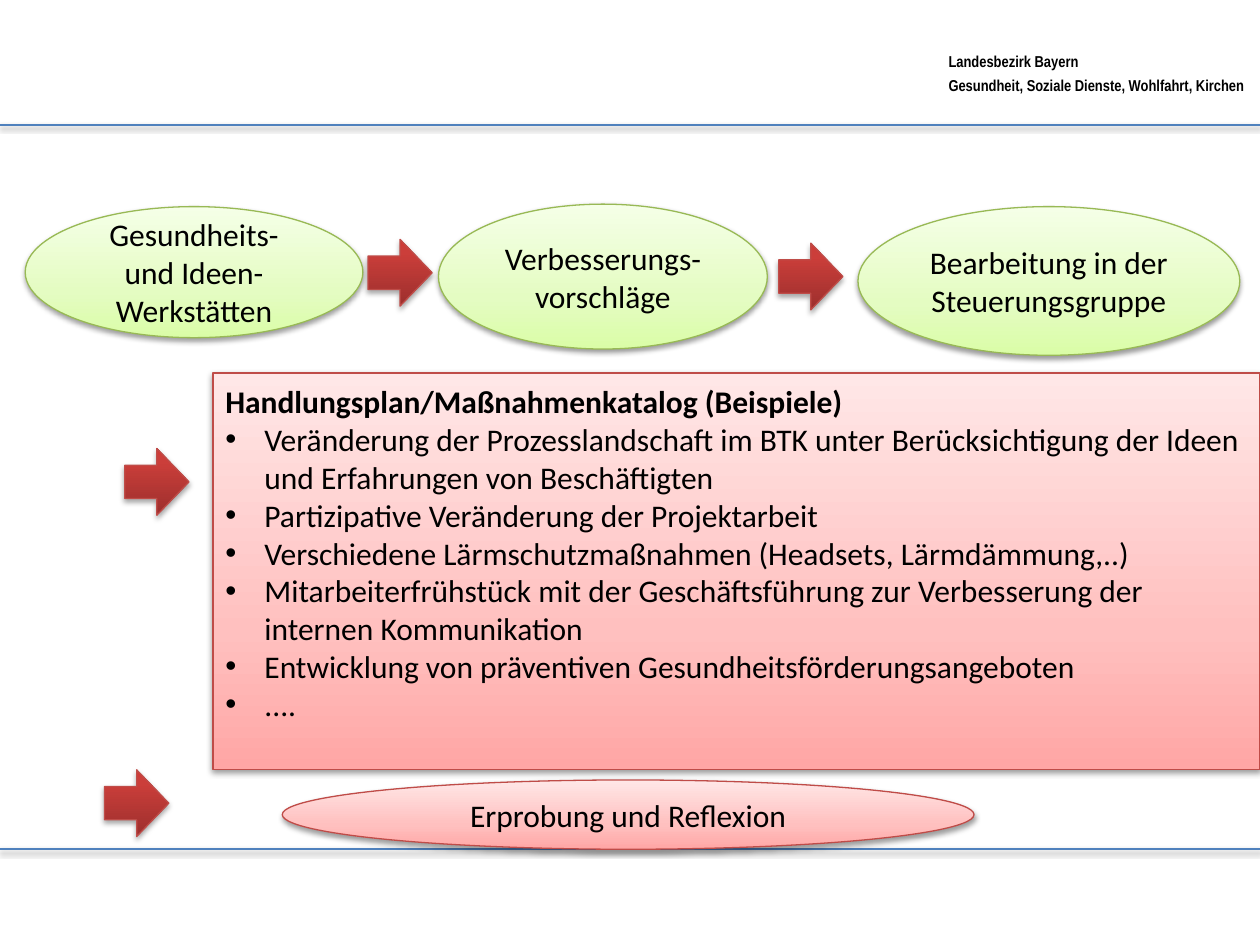
from dataclasses import dataclass

from lxml import etree
from pptx import Presentation
from pptx.dml.color import RGBColor
from pptx.enum.shapes import MSO_CONNECTOR as Connector, MSO_SHAPE as Preset
from pptx.enum.text import MSO_ANCHOR as Anchor, PP_ALIGN as Align
from pptx.oxml.ns import qn
from pptx.util import Inches, Pt


@dataclass(frozen=True)
class Style:
    stops: tuple[tuple[int, str], ...]
    line: str
    shadow_alpha: int = 38
    shadow_distance: float = 1.6


@dataclass(frozen=True)
class Box:
    preset: Preset
    left: float
    top: float
    width: float
    height: float
    style: Style
    text: str = ""


GREEN = Style(((0, "DAFDA7"), (35, "E4FCC2"), (100, "F5FFE7")), "98B955")
PINK = Style(((0, "FFA6A5"), (35, "FFC0BF"), (100, "FFE7E7")), "BF4C48")
RED = Style(((0, "9C2F2D"), (80, "CB3E3A"), (100, "CE3B37")), "BF4C48", 35, 1.8)

HEADER = ["Landesbezirk Bayern", "Gesundheit, Soziale Dienste, Wohlfahrt, Kirchen"]
RULES = [6.74, 0.99]
STEPS = [
    Box(Preset.OVAL, 0.2, 1.64, 2.68, 1.04, GREEN, "Gesundheits-und Ideen-Werkstätten"),
    Box(Preset.OVAL, 3.48, 1.62, 2.61, 1.15, GREEN, "Verbesserungs-vorschläge"),
    Box(Preset.OVAL, 6.81, 1.64, 3.03, 1.18, GREEN, "Bearbeitung in der Steuerungsgruppe"),
]
ARROWS = [(2.92, 1.9), (6.18, 1.93), (0.83, 6.11), (0.99, 3.56)]
REFLECTION = Box(Preset.OVAL, 2.24, 6.19, 5.49, 0.55, PINK, "Erprobung und Reflexion")
PLAN = Box(Preset.RECTANGLE, 1.69, 2.96, 8.31, 3.15, PINK)
PLAN_TITLE = "Handlungsplan/Maßnahmenkatalog (Beispiele)"
MEASURES = [
    "Veränderung der Prozesslandschaft im BTK unter Berücksichtigung der Ideen "
    "und Erfahrungen von Beschäftigten",
    "Partizipative Veränderung der Projektarbeit",
    "Verschiedene Lärmschutzmaßnahmen (Headsets, Lärmdämmung,..)",
    "Mitarbeiterfrühstück mit der Geschäftsführung zur Verbesserung der "
    "internen Kommunikation",
    "Entwicklung von präventiven Gesundheitsförderungsangeboten",
    "....",
]


def color(value: str) -> RGBColor:
    return RGBColor.from_string(value)


def add_color(parent, value: str, alpha: int = 100) -> None:
    element = etree.SubElement(parent, qn("a:srgbClr"), val=value)
    if alpha < 100:
        etree.SubElement(element, qn("a:alpha"), val=str(alpha * 1000))


def set_shadow(shape, alpha: int = 38, distance: float = 1.6) -> None:
    """Add a downward shadow; the line must already be set."""
    effects = etree.SubElement(shape._element.spPr, qn("a:effectLst"))
    shadow = etree.SubElement(
        effects, qn("a:outerShdw"), blurRad=str(Pt(3.1)), dist=str(Pt(distance)),
        dir="5400000", rotWithShape="0")
    add_color(shadow, "000000", alpha)


def set_gradient(shape, stops: tuple[tuple[int, str], ...]) -> None:
    """Fill from bottom to top."""
    shape.fill.gradient()
    shape.fill.gradient_angle = 90
    stop_list = shape._element.spPr.find(".//" + qn("a:gsLst"))
    for old_stop in list(stop_list):
        stop_list.remove(old_stop)
    for position, value in stops:
        add_color(etree.SubElement(stop_list, qn("a:gs"), pos=str(position * 1000)), value)


def add_text(frame, text: str, *, size: float = 18, font: str = "Calibri",
             bold: bool = False, align: Align = Align.LEFT, bullet: bool = False,
             space_after: float = 0) -> None:
    """Write into the first paragraph if it is free, otherwise into a new one."""
    paragraph = frame.paragraphs[0]
    if paragraph.runs:
        paragraph = frame.add_paragraph()
    paragraph.alignment = align
    paragraph.space_after = Pt(space_after)
    if bullet:
        properties = paragraph._p.get_or_add_pPr()
        properties.set("marL", str(Inches(0.31)))
        properties.set("indent", str(Inches(-0.31)))
        etree.SubElement(properties, qn("a:buFont"), typeface="Arial")
        etree.SubElement(properties, qn("a:buChar"), char="•")
    run = paragraph.add_run()
    run.text = text
    run.font.size = Pt(size)
    run.font.name = font
    run.font.bold = bold
    run.font.color.rgb = color("000000")


def add_rule(slide, top: float) -> None:
    rule = slide.shapes.add_connector(
        Connector.STRAIGHT, Inches(0), Inches(top), Inches(10), Inches(top))
    rule.line.color.rgb = color("4F81BD")
    rule.line.width = Pt(1)
    set_shadow(rule)


def add_box(slide, box: Box):
    shape = slide.shapes.add_shape(
        box.preset, Inches(box.left), Inches(box.top), Inches(box.width), Inches(box.height))
    set_gradient(shape, box.style.stops)
    shape.line.color.rgb = color(box.style.line)
    shape.line.width = Pt(0.75)
    set_shadow(shape, box.style.shadow_alpha, box.style.shadow_distance)
    frame = shape.text_frame
    frame.word_wrap = True
    frame.vertical_anchor = Anchor.MIDDLE
    if box.text:
        add_text(frame, box.text, align=Align.CENTER)
    return shape


def main() -> None:
    presentation = Presentation()
    presentation.slide_width = Inches(10)
    presentation.slide_height = Inches(7.5)
    slide = presentation.slides.add_slide(presentation.slide_layouts[6])

    # Header and rules
    header = slide.shapes.add_textbox(Inches(7.43), Inches(0.36), Inches(2.57), Inches(0.55))
    header.text_frame.word_wrap = True
    header.text_frame.margin_right = 0
    for line in HEADER:
        add_text(header.text_frame, line, size=9, font="Arial Narrow", bold=True, space_after=3)
    for top in RULES:
        add_rule(slide, top)

    # Process steps and arrows
    for step in STEPS:
        add_box(slide, step)
    for left, top in ARROWS:
        add_box(slide, Box(Preset.RIGHT_ARROW, left, top, 0.51, 0.53, RED))
    add_box(slide, REFLECTION)

    # Action plan, with one line of free space at the bottom
    plan = add_box(slide, PLAN).text_frame
    plan.margin_bottom = Inches(0.35)
    add_text(plan, PLAN_TITLE, bold=True)
    for measure in MEASURES:
        add_text(plan, measure, bullet=True)

    presentation.save("out.pptx")


if __name__ == "__main__":
    main()
